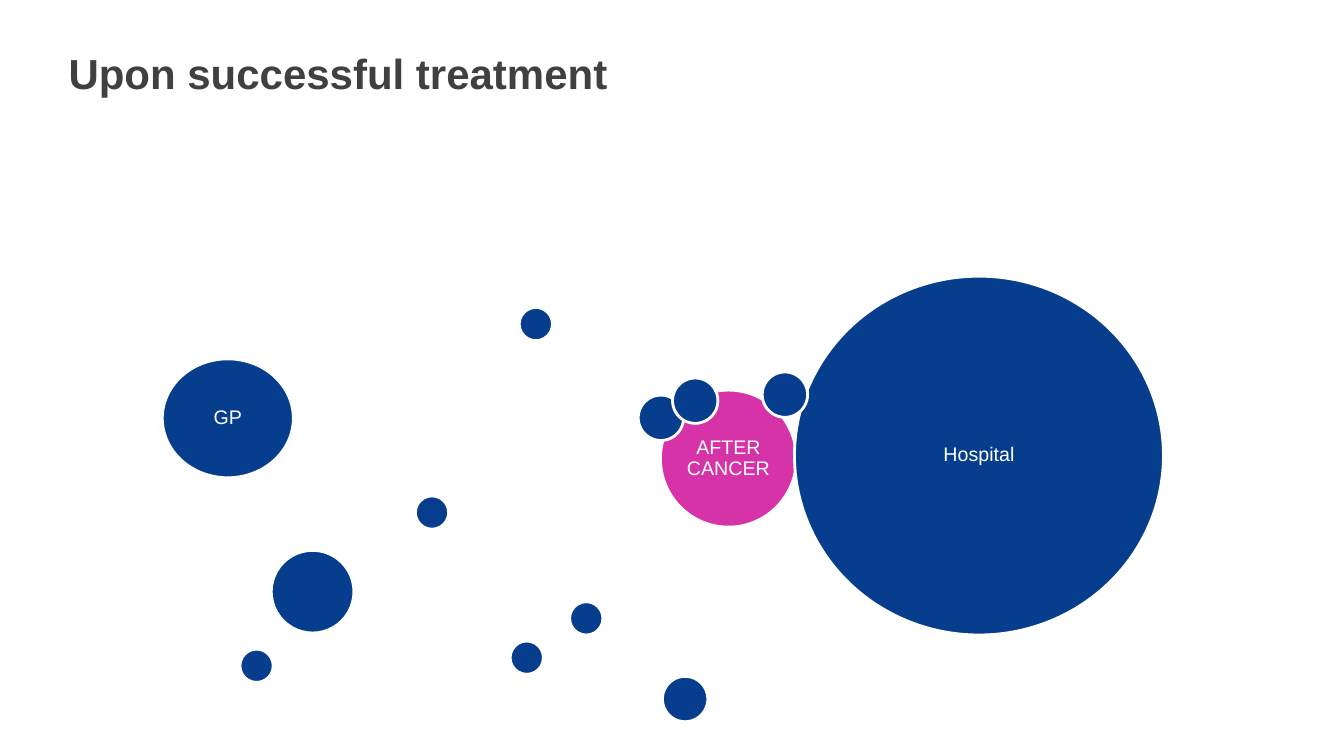
from pptx import Presentation
from pptx import util as u
from pptx.dml import color
from pptx.enum import shapes, text

HUES = {"ink": "404040", "blue": "063E8D", "pink": "D533A7", "white": "FFFFFF"}
SMALL, MID = 0.33, 0.45


def rgb(name):
    """Return the named colour."""
    return color.RGBColor.from_string(HUES[name])


def write(frame, words, size, hue, bold=False, align="LEFT", anchor="TOP",
          inset=0, gap=1.0):
    """Fill a text frame with one formatted paragraph."""
    frame.word_wrap = True
    frame.auto_size = text.MSO_AUTO_SIZE.NONE
    frame.vertical_anchor = getattr(text.MSO_ANCHOR, anchor)
    frame.margin_left = frame.margin_right = u.Inches(inset)
    frame.margin_top = frame.margin_bottom = u.Inches(inset)
    para = frame.paragraphs[0]
    para.alignment = getattr(text.PP_ALIGN, align)
    para.line_spacing = gap
    para.space_before = u.Pt(0)
    run = para.add_run()
    run.text = words
    run.font.name = "Arial"
    run.font.size = u.Pt(size)
    run.font.bold = bold
    run.font.color.rgb = rgb(hue)


def head(slide, box, words):
    """Place the slide title in the box."""
    title = slide.shapes.title
    title.left, title.top, title.width, title.height = map(u.Inches, box)
    write(title.text_frame, words, 30, "ink", bold=True)


def disc(slide, left, top, wide, high=None, label=None, hue="blue"):
    """Draw a white-edged ellipse with an optional label."""
    box = map(u.Inches, (left, top, wide, high or wide))
    oval = slide.shapes.add_shape(shapes.MSO_SHAPE.OVAL, *box)
    oval.shadow.inherit = False
    oval.fill.solid()
    oval.fill.fore_color.rgb = rgb(hue)
    oval.line.color.rgb = rgb("white")
    oval.line.width = u.Pt(2)
    if label:
        write(oval.text_frame, label, 14, "white", align="CENTER",
              anchor="MIDDLE", inset=0.06, gap=0.9)


def field(slide, left, top):
    """Draw the care circles from back to front, offset from a corner."""
    discs = [
        (4.94, 1.13, 1.35, 1.36, "AFTER CANCER", "pink"),
        (4.72, 1.18, MID),
        (3.45, 3.62, SMALL),
        (4.96, 3.97, MID),
        (3.54, 0.31, SMALL),
        (2.51, 2.18, SMALL),
        (0, 0.82, 1.3, 1.18, "GP"),
        (5.06, 1.01, MID),
        (1.08, 2.72, 0.82),
        (6.27, 0, 3.66, 3.56, "Hospital"),
        (5.95, 0.95, MID),
        (0.77, 3.7, SMALL),
        (4.04, 3.23, SMALL),
    ]
    for x, y, *rest in discs:
        disc(slide, left + x, top + y, *rest)


def main():
    """Build and save the deck."""
    deck = Presentation()
    deck.slide_width = u.Inches(13.33)
    deck.slide_height = u.Inches(7.5)
    slide = deck.slides.add_slide(deck.slide_layouts[5])
    head(slide, (0.68, 0.47, 11.97, 0.51), "Upon successful treatment")
    field(slide, 1.61, 2.74)
    deck.save("out.pptx")


if __name__ == "__main__":
    main()
